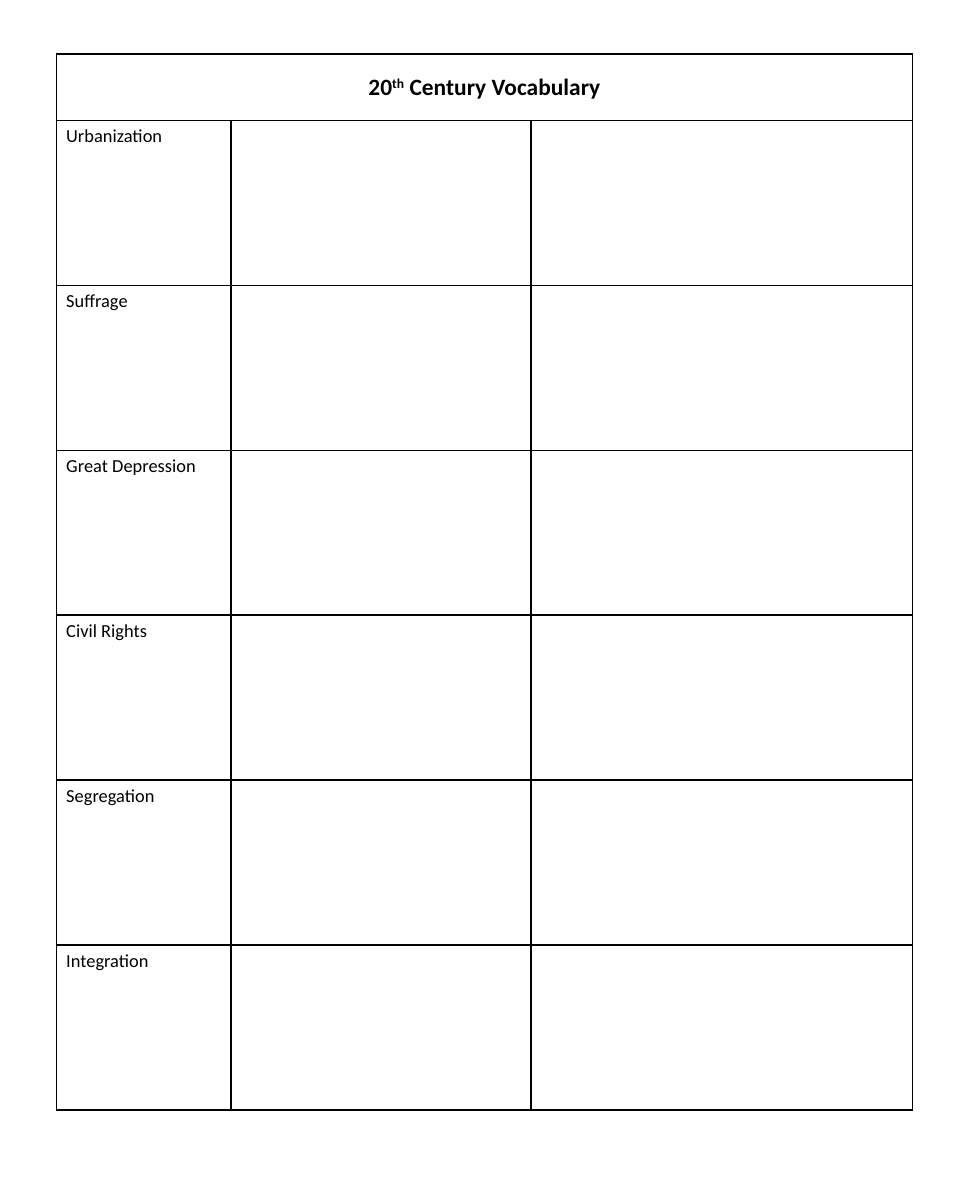
import lxml.etree
import pptx
import pptx.dml.color
import pptx.enum.text
import pptx.oxml.ns
import pptx.util

PX = 9144
PAGE_SIZE = (800, 1000)
TABLE_BOX = (47, 45, 711, 877)
COLUMN_WIDTHS = (145, 249, 317)
TITLE_HEIGHT = 55
COLORS = {"ink": "000000"}
TITLE = (("20", 0), ("th", 30000), (" Century Vocabulary", 0))
TERMS = ("Urbanization", "Suffrage", "Great Depression",
         "Civil Rights", "Segregation", "Integration")


def px(length):
    """Turn a length in px into EMU."""
    return pptx.util.Emu(length * PX)


def add_text(para, text, size=11, bold=False, baseline=0):
    """Add a formatted span of text to a paragraph."""
    span = para.add_run()
    span.text = text
    span.font.name = "Calibri"
    span.font.size = pptx.util.Pt(size)
    span.font.bold = bold
    span.font.color.rgb = pptx.dml.color.RGBColor.from_string(COLORS["ink"])
    if baseline:
        span.font._element.set("baseline", str(baseline))


def style_cell(cell):
    """Give a cell its margins, clear fill and thin border on all sides."""
    cell.margin_left = cell.margin_right = px(8)
    cell.margin_top = cell.margin_bottom = px(4)
    cell.fill.background()
    properties = cell._tc.get_or_add_tcPr()
    qn = pptx.oxml.ns.qn
    for position, side in enumerate(("lnL", "lnR", "lnT", "lnB")):
        line = lxml.etree.Element(qn(f"a:{side}"), w=str(pptx.util.Pt(1)))
        fill = lxml.etree.SubElement(line, qn("a:solidFill"))
        lxml.etree.SubElement(fill, qn("a:srgbClr"), val=COLORS["ink"])
        properties.insert(position, line)


def add_vocabulary_table(page, box):
    """Place the titled vocabulary table in the given box."""
    left, top, width, height = box
    frame = page.shapes.add_table(
        len(TERMS) + 1, len(COLUMN_WIDTHS), px(left), px(top), px(width), px(height))
    table = frame.table
    table.first_row = table.horz_banding = False
    for column, column_width in zip(table.columns, COLUMN_WIDTHS):
        column.width = px(column_width)
    term_height = (height - TITLE_HEIGHT) // len(TERMS)
    for index, row in enumerate(table.rows):
        row.height = px(term_height if index else TITLE_HEIGHT)
        for cell in row.cells:
            style_cell(cell)

    title_cell = table.cell(0, 0)
    title_cell.merge(table.cell(0, len(COLUMN_WIDTHS) - 1))
    title_cell.vertical_anchor = pptx.enum.text.MSO_ANCHOR.MIDDLE
    para = title_cell.text_frame.paragraphs[0]
    para.alignment = pptx.enum.text.PP_ALIGN.CENTER
    for text, baseline in TITLE:
        add_text(para, text, size=14, bold=True, baseline=baseline)
    for index, term in enumerate(TERMS, start=1):
        add_text(table.cell(index, 0).text_frame.paragraphs[0], term)


def main():
    """Build the deck and save it."""
    deck = pptx.Presentation()
    deck.slide_width, deck.slide_height = map(px, PAGE_SIZE)
    page = deck.slides.add_slide(deck.slide_layouts[6])
    add_vocabulary_table(page, TABLE_BOX)
    deck.save("out.pptx")


if __name__ == "__main__":
    main()
